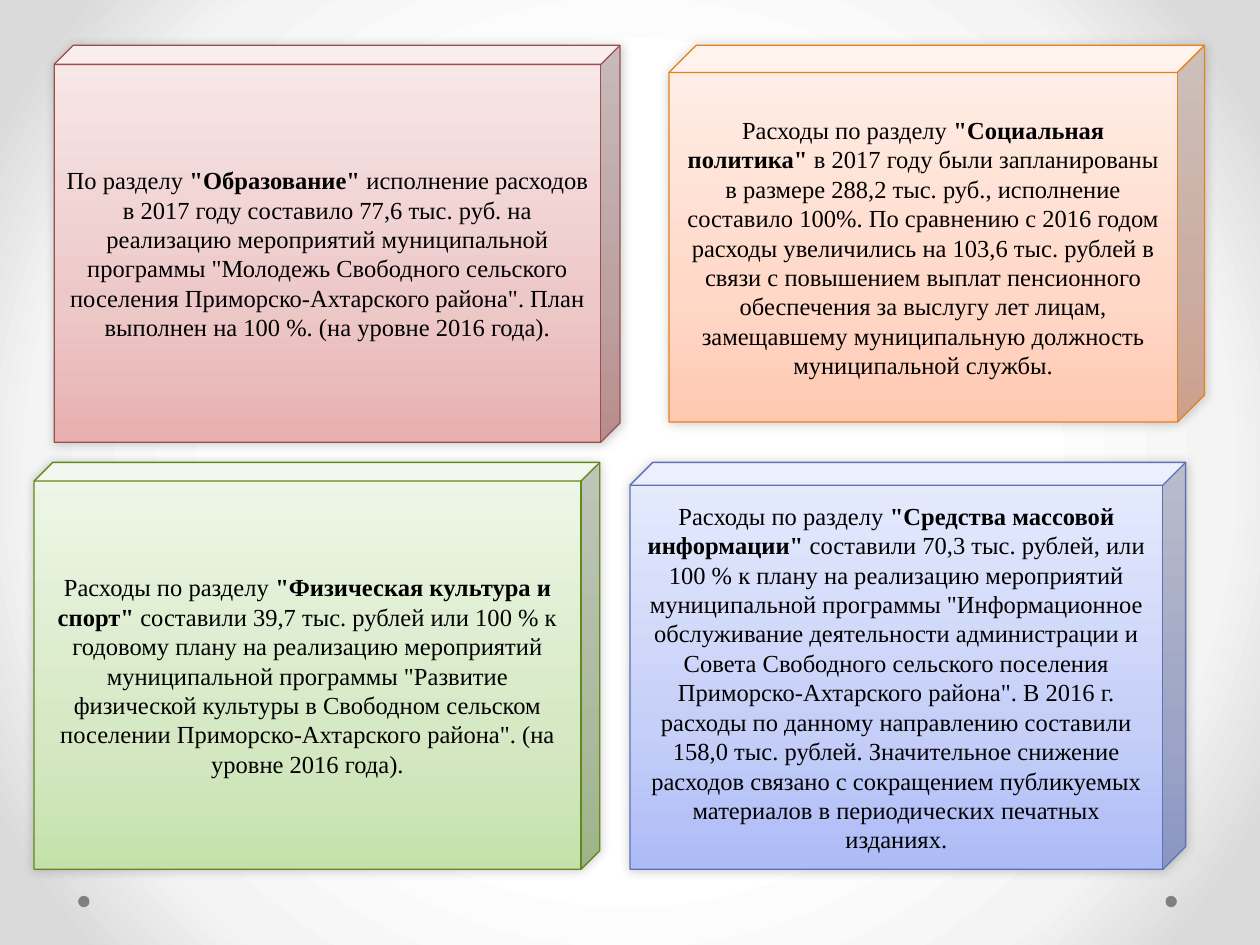
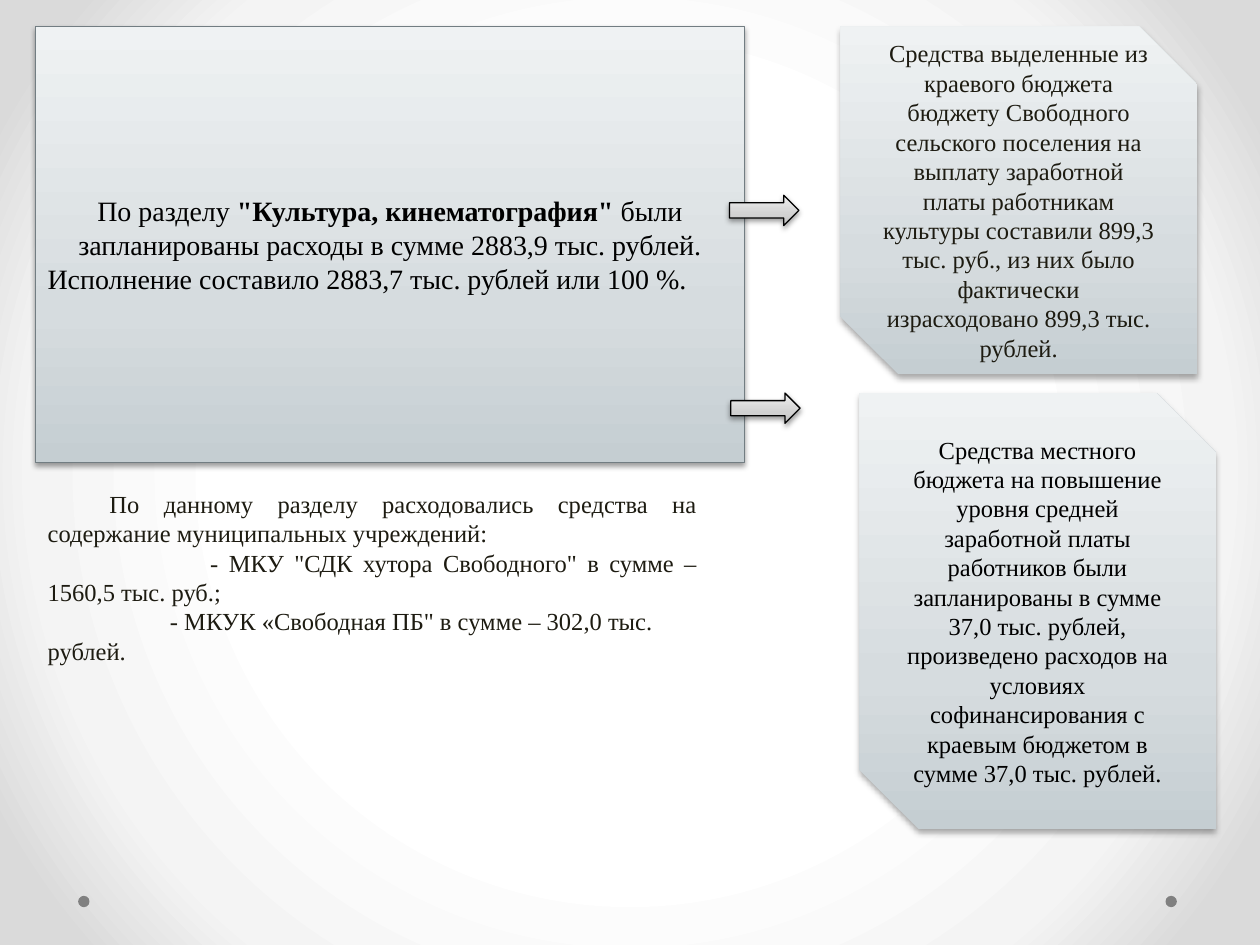
from dataclasses import dataclass
from typing import Optional

from lxml import etree
from pptx import Presentation
from pptx.dml.color import RGBColor
from pptx.enum.shapes import MSO_SHAPE
from pptx.enum.text import MSO_ANCHOR, MSO_AUTO_SIZE, PP_ALIGN
from pptx.oxml.ns import qn
from pptx.util import Inches, Pt

CUBE = MSO_SHAPE.CUBE
RECTANGLE = MSO_SHAPE.RECTANGLE
ARROW = MSO_SHAPE.RIGHT_ARROW
SNIPPED = MSO_SHAPE.SNIP_2_DIAG_RECTANGLE
OVAL = MSO_SHAPE.OVAL
CENTER, LEFT, JUSTIFY = PP_ALIGN.CENTER, PP_ALIGN.LEFT, PP_ALIGN.JUSTIFY

FONT = "Times New Roman"
COLORS = {
    "black": "000000", "ink": "1D1B11", "dot": "808080",
    "red line": "9A4E4E", "orange line": "E6811C", "green line": "62891C",
    "blue line": "5C72B2", "gray line": "727D82",
}
GRADIENTS = {
    "red": ("E8B0B0", "EDC8C8", "F9E9E9"),
    "orange": ("FFC9B1", "FFD8C8", "FFF0EA"),
    "green": ("C5E1AB", "D6E9C5", "EFF7E9"),
    "blue": ("ADBBF6", "C5CFF8", "E8ECFD"),
    "gray": ("C5CED2", "D6DCDF", "EFF2F3"),
    "arrow": ("BDBDBD", "D1D1D1", "EEEEEE"),
    "background": ("FFFFFF", "F4F4F4", "DADADA"),
}
FILL_POSITIONS = (0, 35, 100)
BACKGROUND_POSITIONS = (50, 76, 92)


@dataclass(frozen=True)
class Shadow:
    opacity: int
    blur: float
    distance: float
    angle: int


GLOW = Shadow(20, 6, 0, 315)
DROP = Shadow(38, 3.1, 1.6, 90)
SOFT_DROP = Shadow(32, 3.5, 2.2, 90)


@dataclass(frozen=True)
class TextRun:
    text: str
    bold: bool = False


@dataclass(frozen=True)
class TextParagraph:
    runs: tuple[TextRun, ...]
    alignment: PP_ALIGN = CENTER
    indent: float = 0


@dataclass(frozen=True)
class Panel:
    kind: MSO_SHAPE
    box: tuple[float, float, float, float]
    gradient: str
    shadow: Shadow
    line: Optional[str] = None
    depth: Optional[float] = None
    paragraphs: tuple[TextParagraph, ...] = ()
    size: int = 14
    color: str = "black"


def section(before: str, title: str, after: str) -> TextParagraph:
    """Centred paragraph with the budget section's title in bold."""
    return TextParagraph((TextRun(before), TextRun(title, True), TextRun(after)))


def plain(text: str, alignment: PP_ALIGN = CENTER, indent: float = 0) -> TextParagraph:
    return TextParagraph((TextRun(text),), alignment, indent)


def cube(box: tuple[float, float, float, float], color: str, depth: float,
         paragraph: TextParagraph) -> Panel:
    return Panel(CUBE, box, color, GLOW, f"{color} line", depth, (paragraph,))


def snipped(box: tuple[float, float, float, float], color: str, text: str) -> Panel:
    return Panel(SNIPPED, box, "gray", SOFT_DROP, paragraphs=(plain(text),), color=color)


def arrow(left: float, top: float) -> Panel:
    return Panel(ARROW, (left, top, 0.55, 0.24), "arrow", DROP, "black")


SECTION_CUBES = (
    cube((0.43, 0.36, 4.49, 3.15), "red", 0.048, section(
        "По разделу ", "\"Образование\" ",
        "исполнение расходов в 2017 году составило 77,6 тыс. руб. на реализацию "
        "мероприятий муниципальной программы \"Молодежь Свободного сельского поселения "
        "Приморско-Ахтарского района\". План выполнен на 100 %. (на уровне 2016 года).")),
    cube((5.31, 0.36, 4.25, 2.99), "orange", 0.072, section(
        "Расходы по разделу ", "\"Социальная политика\" ",
        "в 2017 году были запланированы в размере 288,2 тыс. руб., исполнение составило "
        "100%. По сравнению с 2016 годом расходы увеличились на 103,6 тыс. рублей в связи "
        "с повышением выплат пенсионного обеспечения за выслугу лет лицам, замещавшему "
        "муниципальную должность муниципальной службы.")),
    cube((0.27, 3.67, 4.49, 3.23), "green", 0.046, section(
        "Расходы по разделу ", "\"Физическая культура и спорт\" ",
        "составили 39,7 тыс. рублей или 100 % к годовому плану на реализацию мероприятий "
        "муниципальной программы \"Развитие физической культуры в Свободном сельском "
        "поселении Приморско-Ахтарского района\". (на уровне 2016 года).")),
    cube((5, 3.67, 4.41, 3.23), "blue", 0.056, section(
        "Расходы по разделу ", "\"Средства массовой информации\" ",
        "составили 70,3 тыс. рублей, или 100 % к плану на реализацию мероприятий "
        "муниципальной программы \"Информационное обслуживание деятельности администрации "
        "и Совета Свободного сельского поселения Приморско-Ахтарского района\". В 2016 г. "
        "расходы по данному направлению составили 158,0 тыс. рублей. Значительное снижение "
        "расходов связано с сокращением публикуемых материалов в периодических печатных "
        "изданиях.")),
)

CULTURE_PANELS = (
    Panel(RECTANGLE, (0.28, 0.21, 5.63, 3.46), "gray", DROP, "gray line", paragraphs=(
        section("По разделу ", "\"Культура, кинематография\" ",
                "были запланированы расходы в сумме 2883,9 тыс. рублей."),
        plain("Исполнение составило 2883,7 тыс. рублей или 100 %.", LEFT),
    ), size=16),
    arrow(5.79, 1.55),
    arrow(5.8, 3.12),
    snipped((6.67, 0.21, 2.83, 2.76), "ink",
            "Средства выделенные из краевого бюджета бюджету Свободного сельского поселения "
            "на выплату заработной платы работникам культуры составили 899,3 тыс. руб., из "
            "них было фактически израсходовано 899,3 тыс. рублей."),
    snipped((6.82, 3.12, 2.83, 3.46), "black",
            "Средства местного бюджета на повышение уровня средней заработной платы "
            "работников были запланированы в сумме 37,0 тыс. рублей, произведено расходов на "
            "условиях софинансирования с краевым бюджетом в сумме 37,0 тыс. рублей."),
)

INSTITUTION_COSTS = (
    plain("По данному разделу расходовались средства на содержание муниципальных "
          "учреждений:", JUSTIFY, 0.49),
    plain("- МКУ \"СДК хутора Свободного\" в сумме – 1560,5 тыс. руб.;", JUSTIFY, 1.29),
    plain("- МКУК «Свободная ПБ\" в сумме – 302,0 тыс. рублей.", LEFT, 0.97),
)


def gradient_element(name: str, positions: tuple[int, ...]) -> etree._Element:
    gradient = etree.Element(qn("a:gradFill"), rotWithShape="1")
    stops = etree.SubElement(gradient, qn("a:gsLst"))
    for position, color in zip(positions, GRADIENTS[name]):
        stop = etree.SubElement(stops, qn("a:gs"), pos=str(position * 1000))
        etree.SubElement(stop, qn("a:srgbClr"), val=color)
    return gradient


def set_background(master) -> None:
    master.background.fill.solid()
    solid = master.element.find(".//" + qn("p:bgPr")).find(qn("a:solidFill"))
    gradient = gradient_element("background", BACKGROUND_POSITIONS)
    circle = etree.SubElement(gradient, qn("a:path"))
    circle.set("path", "circle")
    etree.SubElement(circle, qn("a:fillToRect"), l="50000", t="50000", r="50000", b="50000")
    solid.getparent().replace(solid, gradient)


def set_gradient(shape, name: str) -> None:
    shape.fill.solid()
    properties = shape.element.spPr
    gradient = gradient_element(name, FILL_POSITIONS)
    etree.SubElement(gradient, qn("a:lin"), ang=str(270 * 60000), scaled="0")
    properties.replace(properties.find(qn("a:solidFill")), gradient)


def set_shadow(shape, shadow: Shadow) -> None:
    shape.shadow.inherit = False
    effects = shape.element.spPr.find(qn("a:effectLst"))
    outer = etree.SubElement(
        effects, qn("a:outerShdw"), blurRad=str(Pt(shadow.blur)),
        dist=str(Pt(shadow.distance)), dir=str(shadow.angle * 60000), rotWithShape="0")
    color = etree.SubElement(outer, qn("a:srgbClr"), val=COLORS["black"])
    etree.SubElement(color, qn("a:alpha"), val=str(shadow.opacity * 1000))


def write_text(frame, paragraphs: tuple[TextParagraph, ...], size: int, color: str) -> None:
    frame.word_wrap = True
    for index, content in enumerate(paragraphs):
        paragraph = frame.add_paragraph() if index else frame.paragraphs[0]
        paragraph.alignment = content.alignment
        if content.indent:
            properties = paragraph._p.get_or_add_pPr()
            properties.set("marL", "0")
            properties.set("indent", str(Inches(content.indent)))
        for text_run in content.runs:
            run = paragraph.add_run()
            run.text = text_run.text
            run.font.name = FONT
            run.font.size = Pt(size)
            run.font.bold = text_run.bold
            run.font.color.rgb = RGBColor.from_string(COLORS[color])


def add_panel(slide, panel: Panel) -> None:
    shape = slide.shapes.add_shape(panel.kind, *map(Inches, panel.box))
    if panel.depth is not None:
        shape.adjustments[0] = panel.depth
    set_gradient(shape, panel.gradient)
    if panel.line:
        shape.line.color.rgb = RGBColor.from_string(COLORS[panel.line])
        shape.line.width = Pt(0.75)
    else:
        shape.line.fill.background()
    set_shadow(shape, panel.shadow)
    if panel.paragraphs:
        shape.text_frame.vertical_anchor = MSO_ANCHOR.MIDDLE
        write_text(shape.text_frame, panel.paragraphs, panel.size, panel.color)


def add_panel_slide(presentation, panels: tuple[Panel, ...]):
    """Add a slide with the two footer dots and the given panels."""
    slide = presentation.slides.add_slide(presentation.slide_layouts[6])
    for left in (9.25, 0.62):
        dot = slide.shapes.add_shape(OVAL, *map(Inches, (left, 7.11, 0.09, 0.09)))
        dot.fill.solid()
        dot.fill.fore_color.rgb = RGBColor.from_string(COLORS["dot"])
        dot.line.fill.background()
        dot.shadow.inherit = False
    for panel in panels:
        add_panel(slide, panel)
    return slide


def main() -> None:
    presentation = Presentation()
    presentation.slide_width = Inches(10)
    presentation.slide_height = Inches(7.5)
    set_background(presentation.slide_master)

    add_panel_slide(presentation, SECTION_CUBES)
    culture_slide = add_panel_slide(presentation, CULTURE_PANELS)
    costs = culture_slide.shapes.add_textbox(*map(Inches, (0.28, 3.83, 5.35, 1.63)))
    costs.text_frame.auto_size = MSO_AUTO_SIZE.SHAPE_TO_FIT_TEXT
    write_text(costs.text_frame, INSTITUTION_COSTS, 14, "ink")

    presentation.save("out.pptx")


if __name__ == "__main__":
    main()
